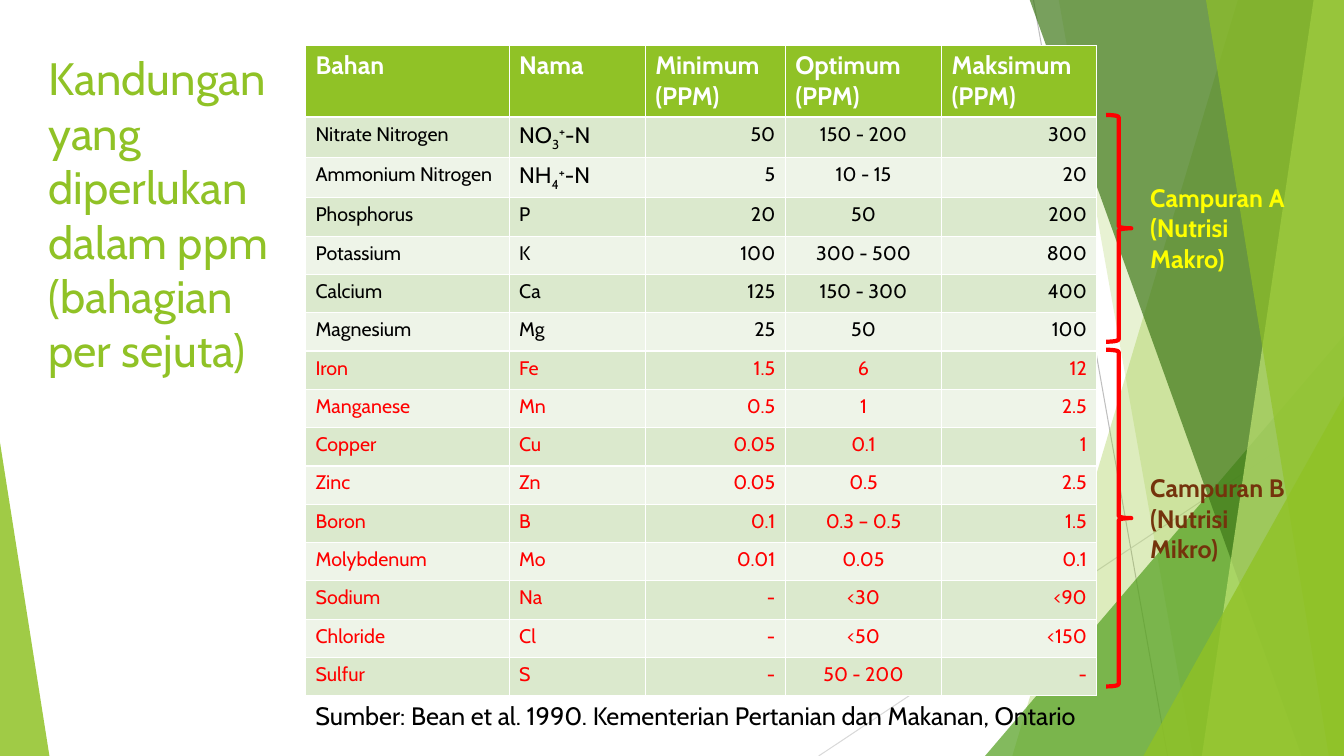
"""Build the slide on nutrient content in ppm: a table with two bracketed mixtures."""
from lxml.etree import SubElement
from pptx import Presentation
from pptx.dml.color import RGBColor
from pptx.enum.shapes import MSO_CONNECTOR as CONN, MSO_SHAPE as SHAPE
from pptx.enum.text import MSO_ANCHOR as ANCHOR, MSO_AUTO_SIZE as AUTO, PP_ALIGN as ALIGN
from pptx.oxml.ns import qn
from pptx.util import Inches, Pt

W, H = 13.33, 7.5
FONT = "Cabin"
COLORS = {
    "lime": "90C226", "green": "54A021", "forest": "3F7819", "pale": "C0E474",
    "odd": "DBE9CD", "even": "EEF4E8", "white": "FFFFFF", "black": "000000",
    "red": "FF0000", "yellow": "FFFF00", "brown": "74330C",
    "gray": "BFBFBF", "silver": "D9D9D9",
}

TITLE = "Kandungan yang diperlukan dalam ppm (bahagian per sejuta)"
SOURCE = "Sumber: Bean et al. 1990. Kementerian Pertanian dan Makanan, Ontario"
HEADER = ["Bahan", "Nama", "Minimum (PPM)", "Optimum (PPM)", "Maksimum (PPM)"]
NITRATE = [("NO", 0), ("3", -25), ("+", 30), ("-N", 0)]
AMMONIUM = [("NH", 0), ("4", -25), ("+", 30), ("-N", 0)]
MACRO = [
    ("Nitrate Nitrogen", NITRATE, "50", "150 - 200", "300"),
    ("Ammonium Nitrogen", AMMONIUM, "5", "10 - 15", "20"),
    ("Phosphorus", "P", "20", "50", "200"),
    ("Potassium", "K", "100", "300 - 500", "800"),
    ("Calcium", "Ca", "125", "150 - 300", "400"),
    ("Magnesium", "Mg", "25", "50", "100"),
]
MICRO = [
    ("Iron", "Fe", "1.5", "6", "12"),
    ("Manganese", "Mn", "0.5", "1", "2.5"),
    ("Copper", "Cu", "0.05", "0.1", "1"),
    ("Zinc", "Zn", "0.05", "0.5", "2.5"),
    ("Boron", "B", "0.1", "0.3 – 0.5", "1.5"),
    ("Molybdenum", "Mo", "0.01", "0.05", "0.1"),
    ("Sodium", "Na", "-", "<30", "<90"),
    ("Chloride", "Cl", "-", "<50", "<150"),
    ("Sulfur", "S", "-", "50 - 200", "-"),
]
COLS = [2.02, 1.35, 1.39, 1.55, 1.54]
ALIGNS = [ALIGN.LEFT, ALIGN.LEFT, ALIGN.RIGHT, ALIGN.CENTER, ALIGN.RIGHT]
ROW = 0.38
TABLE_LEFT, TABLE_TOP = 3.03, 0.45
MIXTURES = [
    ("Campuran A (Nutrisi Makro)", "yellow", 1.14, 2.25, 1.76, 1.73),
    ("Campuran B (Nutrisi Mikro)", "brown", 3.47, 3.34, 4.64, 1.65),
]

RAYS = [((10.25, 0), (11.58, H), "gray"), ((W, 4.03), (8.12, H), "silver")]
BANDS = [
    (12.28, 10.04, "lime", 30),
    (10.5, 11.83, "lime", 20),
    (W, 9.77, 3.33, 1, "green", 72),
    (10.21, 12.91, "forest", 70),
    (13.03, 11.92, "pale", 70),
    (11.96, 13.18, "lime", 65),
    (W, 11.34, 3.93, 1, "lime", 80),
    (0.49, 0, 4.39, 0, "lime", 85),
]


def rgb(name):
    return RGBColor.from_string(COLORS[name])


def write(tf, text, size=18, color="black", bold=False, align=ALIGN.LEFT):
    tf.word_wrap = True
    p = tf.paragraphs[0]
    p.alignment = align
    for part, baseline in [(text, 0)] if isinstance(text, str) else text:
        r = p.add_run()
        r.text = part
        r.font.name, r.font.size, r.font.bold = FONT, Pt(size), bold
        r.font.color.rgb = rgb(color)
        if baseline:
            r.font._element.set("baseline", str(baseline * 1000))


def add_text(shapes, text, left, top, width, height, **fmt):
    s = shapes.add_textbox(*map(Inches, (left, top, width, height)))
    write(s.text_frame, text, **fmt)


def add_band(shapes, *band):
    *geometry, color, alpha = band
    if len(geometry) == 2:
        top_x, bottom_x = geometry
        points = [(W, -0.01), (W, H), (bottom_x, H), (top_x, -0.01)]
        builder = shapes.build_freeform(Inches(top_x), Inches(-0.01))
        builder.add_line_segments([(Inches(x), Inches(y)) for x, y in points])
        s = builder.convert_to_shape()
    else:
        right, left, top, apex = geometry
        s = shapes.add_shape(SHAPE.ISOSCELES_TRIANGLE,
                             *map(Inches, (left, top, right - left, H - top)))
        s.adjustments[0] = apex
    s.shadow.inherit = False
    s.line.fill.background()
    s.fill.solid()
    s.fill.fore_color.rgb = rgb(color)
    fill = s._element.spPr.find(qn("a:solidFill"))
    SubElement(fill[0], qn("a:alpha"), val=str(alpha * 1000))


def add_backdrop(shapes):
    for start, end, color in RAYS:
        s = shapes.add_connector(CONN.STRAIGHT, *map(Inches, start + end))
        s.line.color.rgb, s.line.width = rgb(color), Pt(0.75)
        SubElement(s._element.spPr, qn("a:effectLst"))
    for band in BANDS:
        add_band(shapes, *band)


def add_nutrients(shapes):
    rows = [HEADER, *MACRO, *MICRO]
    size = (TABLE_LEFT, TABLE_TOP, sum(COLS), ROW * len(rows))
    table = shapes.add_table(len(rows), len(COLS), *map(Inches, size)).table
    for column, width in zip(table.columns, COLS):
        column.width = Inches(width)
    for i, row in enumerate(rows):
        table.rows[i].height = Inches(ROW)
        for j, text in enumerate(row):
            cell = table.cell(i, j)
            cell.fill.solid()
            if i == 0:
                cell.fill.fore_color.rgb = rgb("lime")
                write(cell.text_frame, text, color="white", bold=True)
                continue
            cell.fill.fore_color.rgb = rgb("odd" if i % 2 else "even")
            write(cell.text_frame, text, size=14 if isinstance(text, str) else 16,
                  color="red" if i > len(MACRO) else "black", align=ALIGNS[j])


def add_mixture(shapes, label, color, top, height, label_top, label_width):
    s = shapes.add_shape(SHAPE.RIGHT_BRACE, *map(Inches, (10.97, top, 0.25, height)))
    s.shadow.inherit = False
    s.fill.background()
    s.line.color.rgb, s.line.width = rgb("red"), Pt(3)
    add_text(shapes, label, 11.31, label_top, label_width, 1.01, color=color, bold=True)


def main():
    prs = Presentation()
    prs.slide_width, prs.slide_height = Inches(W), Inches(H)
    slide = prs.slides.add_slide(prs.slide_layouts[5])
    shapes = slide.shapes
    add_backdrop(shapes)
    title = shapes.title
    title.left, title.top, title.width, title.height = map(Inches, (0.38, 0.45, 2.5, 2.11))
    title.text_frame.auto_size = AUTO.NONE
    title.text_frame.vertical_anchor = ANCHOR.TOP
    write(title.text_frame, TITLE, size=32.4, color="lime")
    add_nutrients(shapes)
    add_text(shapes, SOURCE, TABLE_LEFT, 6.9, 8.4, 0.4)
    for mixture in MIXTURES:
        add_mixture(shapes, *mixture)
    prs.save("out.pptx")


if __name__ == "__main__":
    main()
